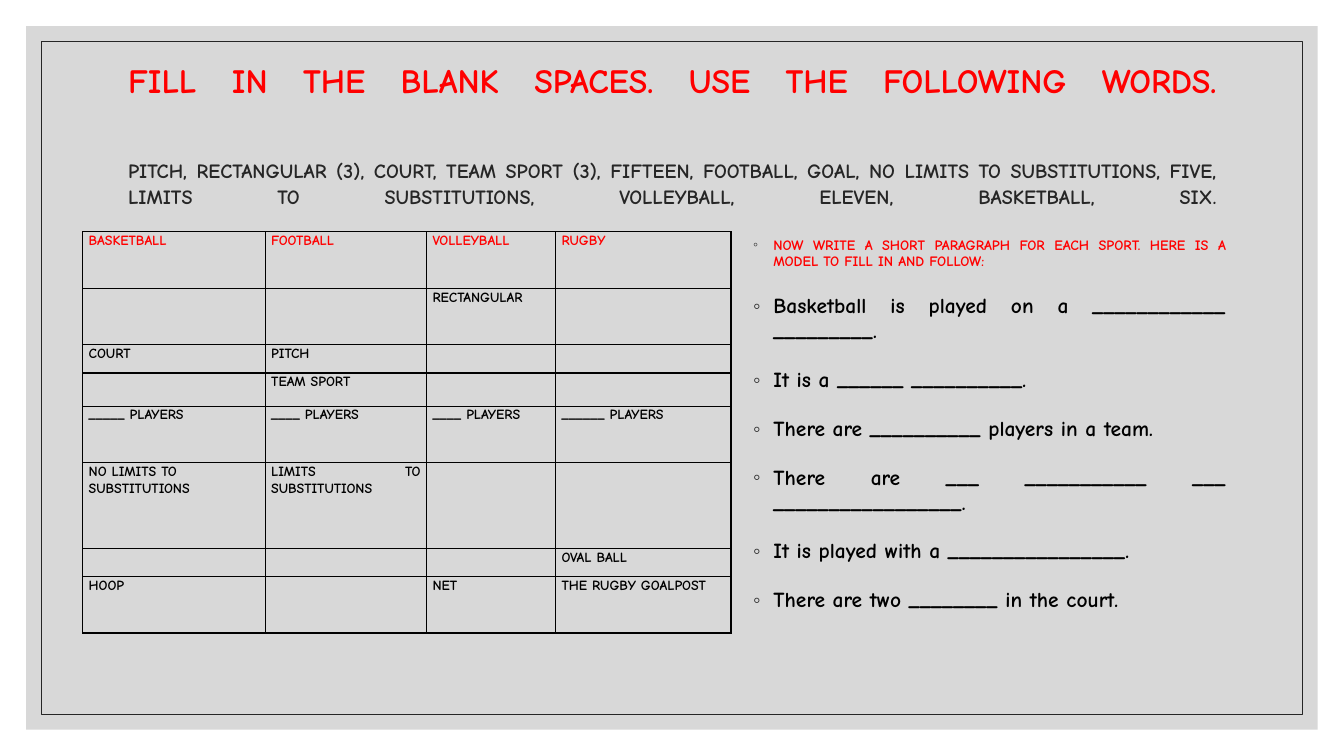
"""Build a fill-in-the-blanks slide about team sports."""
from lxml.etree import SubElement
from pptx import Presentation
from pptx.dml.color import RGBColor
from pptx.enum.shapes import MSO_SHAPE as Preset
from pptx.enum.text import MSO_ANCHOR as Anchor, MSO_AUTO_SIZE as AutoSize, PP_ALIGN as Align
from pptx.oxml.ns import qn
from pptx.util import Inches, Pt

FONT = "Comic Neue"
RED, BLACK, DARK, GRAY = "FF0000", "000000", "262626", "BFBFBF"
SLIDE_SIZE = (13.33, 7.5)
PANEL_MARGIN, FRAME_MARGIN = 0.26, 0.41

HEADING = "FILL IN THE BLANK SPACES. USE THE FOLLOWING WORDS."
WORDS = ("PITCH, RECTANGULAR (3), COURT, TEAM SPORT (3), FIFTEEN, FOOTBALL, GOAL, "
         "NO LIMITS TO SUBSTITUTIONS, FIVE, LIMITS TO SUBSTITUTIONS, VOLLEYBALL, "
         "ELEVEN, BASKETBALL, SIX.")
TITLE_RUNS = [(24.3, RED), (14.4, DARK)]
BREAK_SIZES = [24.3, 31, 14.4]
TITLE_END_SIZE = 10

SPORTS = [
    ("BASKETBALL", "FOOTBALL", "VOLLEYBALL", "RUGBY"),
    ("", "", "RECTANGULAR", ""),
    ("COURT", "PITCH", "", ""),
    ("", "TEAM SPORT", "", ""),
    ("_____ PLAYERS", "____ PLAYERS", "____ PLAYERS", "______ PLAYERS"),
    ("NO LIMITS TO\nSUBSTITUTIONS", "LIMITS TO SUBSTITUTIONS", "", ""),
    ("", "", "", "OVAL BALL"),
    ("HOOP", "", "NET", "THE RUGBY GOALPOST"),
]
COLUMN_WIDTHS = [1.81, 1.6, 1.28, 1.74]
ROW_HEIGHTS = [0.56, 0.56, 0.28, 0.33, 0.56, 0.85, 0.28, 0.56]

MODEL = [
    "NOW WRITE A SHORT PARAGRAPH FOR EACH SPORT. HERE IS A MODEL TO FILL IN AND FOLLOW:",
    "Basketball is played on a ____________ _________.",
    "It is a ______ __________.",
    "There are __________ players in a team.",
    "There are ___ ___________ ___ _________________.",
    "It is played with a ________________.",
    "There are two ________ in the court.",
]


def color(value):
    return RGBColor.from_string(value)


def place(shape, *box):
    shape.left, shape.top, shape.width, shape.height = map(Inches, box)


def format_run(run, size, value):
    run.font.name, run.font.size, run.font.bold = FONT, Pt(size), True
    run.font.color.rgb = color(value)


def format_mark(properties, size):
    properties.set("sz", str(round(size * 100)))
    properties.set("b", "1")
    SubElement(properties, qn("a:latin"), typeface=FONT)


def add_frame(slide, position, margin):
    width, height = (side - 2 * margin for side in SLIDE_SIZE)
    shape = slide.shapes.add_shape(Preset.RECTANGLE, *map(Inches, (margin, margin, width, height)))
    shape.shadow.inherit = False
    slide.shapes._spTree.insert(position, shape._element)
    return shape


def add_background(slide):
    panel = add_frame(slide, 2, PANEL_MARGIN)
    panel.fill.solid()
    panel.fill.fore_color.rgb = color(GRAY)
    SubElement(panel._element.spPr.find(".//" + qn("a:srgbClr")), qn("a:alpha"), val="60000")
    panel.line.fill.background()
    border = add_frame(slide, 3, FRAME_MARGIN)
    border.fill.background()
    border.line.color.rgb = color(DARK)
    border.line.width = Pt(0.5)


def fill_title(title):
    place(title, 1.17, 0.7, 11, 1.4)
    frame = title.text_frame
    frame.text = f"{HEADING}\v\v{WORDS}\v"
    frame.word_wrap, frame.auto_size = True, AutoSize.NONE
    frame.vertical_anchor = Anchor.MIDDLE
    paragraph = frame.paragraphs[0]
    paragraph.alignment, paragraph.line_spacing = Align.JUSTIFY, 1.07
    paragraph.space_before, paragraph.space_after = Pt(0), Pt(8)
    for run, (size, value) in zip(paragraph.runs, TITLE_RUNS):
        format_run(run, size, value)
    for line_break, size in zip(paragraph._p.findall(qn("a:br")), BREAK_SIZES):
        format_mark(SubElement(line_break, qn("a:rPr")), size)
    format_mark(SubElement(paragraph._p, qn("a:endParaRPr")), TITLE_END_SIZE)


def add_cell_borders(cell):
    properties = cell._tc.get_or_add_tcPr()
    for index, side in enumerate(("a:lnL", "a:lnR", "a:lnT", "a:lnB")):
        line = properties.makeelement(qn(side), {"w": str(Pt(1))})
        SubElement(SubElement(line, qn("a:solidFill")), qn("a:srgbClr"), val=BLACK)
        properties.insert(index, line)


def fill_cell(cell, text, value):
    cell.text = text
    cell.fill.background()
    cell.margin_left = cell.margin_right = Inches(0.06)
    cell.margin_top = cell.margin_bottom = 0
    add_cell_borders(cell)
    for paragraph in cell.text_frame.paragraphs:
        paragraph.alignment, paragraph.line_spacing = Align.JUSTIFY, 1.07
        for run in paragraph.runs:
            format_run(run, 10, value)
        if not paragraph.runs:
            format_mark(SubElement(paragraph._p, qn("a:endParaRPr")), 10)


def add_sports_table(slide):
    box = map(Inches, (0.82, 2.3, sum(COLUMN_WIDTHS), sum(ROW_HEIGHTS)))
    table = slide.shapes.add_table(len(SPORTS), len(COLUMN_WIDTHS), *box).table
    table.first_row = table.horz_banding = False
    for column, width in zip(table.columns, COLUMN_WIDTHS):
        column.width = Inches(width)
    for row_index, (row, height, texts) in enumerate(zip(table.rows, ROW_HEIGHTS, SPORTS)):
        row.height = Inches(height)
        for cell, text in zip(row.cells, texts):
            fill_cell(cell, text, BLACK if row_index else RED)


def fill_model(body):
    place(body, 7.37, 2.3, 4.89, 4.1)
    frame = body.text_frame
    frame.text = "\n".join(MODEL)
    frame.word_wrap, frame.auto_size = True, AutoSize.NONE
    frame.vertical_anchor = Anchor.TOP
    for index, paragraph in enumerate(frame.paragraphs):
        paragraph.alignment, paragraph.line_spacing = Align.JUSTIFY, 0.97
        paragraph.space_before, paragraph.space_after = Pt(9), Pt(8)
        format_run(paragraph.runs[0], *((15.3, BLACK) if index else (10.2, RED)))
        properties = paragraph._p.get_or_add_pPr()
        properties.set("marL", str(Inches(0.2)))
        properties.set("indent", str(-Inches(0.2)))
        SubElement(SubElement(properties, qn("a:buClr")), qn("a:srgbClr"), val=DARK)
        SubElement(properties, qn("a:buChar"), char="◦")


def main():
    presentation = Presentation()
    presentation.slide_width, presentation.slide_height = map(Inches, SLIDE_SIZE)
    slide = presentation.slides.add_slide(presentation.slide_layouts[1])
    add_background(slide)
    fill_title(slide.shapes.title)
    add_sports_table(slide)
    fill_model(slide.placeholders[1])
    presentation.save("out.pptx")


if __name__ == "__main__":
    main()
